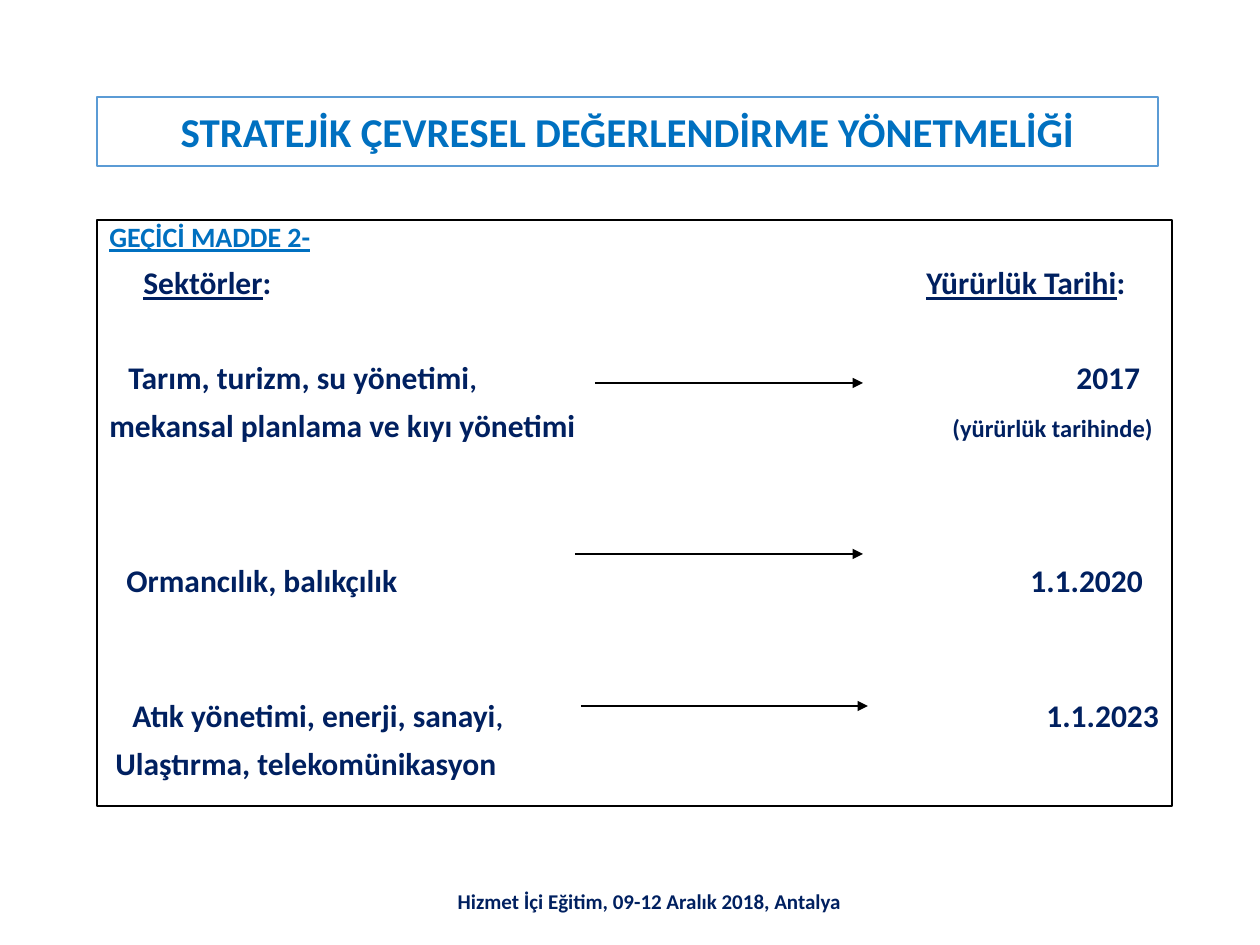
import pptx
import pptx.util
import pptx.dml.color
import pptx.enum.shapes
import pptx.enum.text
import pptx.oxml.ns
import lxml.etree

PX = 914400 / 126
BLUE, NAVY, BLACK = "0070C0", "002060", "000000"
align = pptx.enum.text.PP_ALIGN
anchor = pptx.enum.text.MSO_ANCHOR
qn = pptx.oxml.ns.qn


def paint(form, color):
    form.solid()
    form.fore_color.rgb = pptx.dml.color.RGBColor.from_string(color)


def write(para, text, size, color, under=False):
    run = para.add_run()
    run.text = text
    font = run.font
    font.name, font.size, font.bold = "Calibri", pptx.util.Pt(size), True
    font.underline = under
    paint(font.fill, color)


deck = pptx.Presentation()
deck.slide_width = round(1260 * PX)
deck.slide_height = round(945 * PX)
slide = deck.slides.add_slide(deck.slide_layouts[6])

# Framed boxes: title and body
frames = []
for left, top, width, height, edge, hold in [
    (97, 97, 1061, 69, "5B9BD5", anchor.MIDDLE),
    (97, 220, 1075, 586, BLACK, anchor.TOP),
]:
    box = slide.shapes.add_shape(
        pptx.enum.shapes.MSO_SHAPE.RECTANGLE,
        *[round(n * PX) for n in (left, top, width, height)])
    box.shadow.inherit = False
    box.fill.background()
    paint(box.line.fill, edge)
    box.line.width = pptx.util.Pt(0.75)
    box.text_frame.word_wrap = True
    box.text_frame.vertical_anchor = hold
    frames.append(box.text_frame)
title, body = frames

para = title.paragraphs[0]
para.alignment = align.CENTER
write(para, "STRATEJİK ÇEVRESEL DEĞERLENDİRME YÖNETMELİĞİ", 23.4, BLUE)

# Body rows: space before in points, tab stops in px, runs (text, size, underline)
rows = [
    (10, [34, 817], [("\t", 18, False), ("Sektörler", 18, True), (":\t", 18, False),
                     ("Yürürlük Tarihi", 18, True), (":", 18, False)]),
    (37, [19, 967], [("\tTarım, turizm, su yönetimi", 18, False), (",\t", 16, False),
                     ("2017", 18, False)]),
    (10, [843], [("mekansal planlama ve kıyı yönetimi\t", 18, False),
                 ("(yürürlük tarihinde)", 14, False)]),
    (71, [17, 921], [("\tOrmancılık, balıkçılık\t1.1.2020", 18, False)]),
    (60, [23, 937], [("\tAtık yönetimi, enerji, sanayi", 18, False), (",\t", 16, False),
                     ("1.1.2023", 18, False)]),
    (10, [6], [("\tUlaştırma, telekomünikasyon", 18, False)]),
]
para = body.paragraphs[0]
para.alignment = align.LEFT
para.line_spacing = 0.8
write(para, "GEÇİCİ MADDE 2-", 16, BLUE, True)
for space, stops, runs in rows:
    para = body.add_paragraph()
    para.alignment = align.LEFT
    para.line_spacing = 0.8
    para.space_before = pptx.util.Pt(space)
    tabs = lxml.etree.SubElement(para._p.get_or_add_pPr(), qn("a:tabLst"))
    for stop in stops:
        lxml.etree.SubElement(tabs, qn("a:tab"), pos=str(round(stop * PX)), algn="l")
    for text, size, under in runs:
        write(para, text, size, NAVY, under)

# Arrows from sectors to dates
for start, end, y in [(595, 863, 383), (575, 863, 554), (581, 868, 706)]:
    arrow = slide.shapes.add_connector(
        pptx.enum.shapes.MSO_CONNECTOR.STRAIGHT,
        *[round(n * PX) for n in (start, y, end, y)])
    paint(arrow.line.fill, BLACK)
    arrow.line.width = pptx.util.Pt(0.75)
    lxml.etree.SubElement(arrow.line._get_or_add_ln(), qn("a:tailEnd"), type="triangle")
    lxml.etree.SubElement(arrow._element.spPr, qn("a:effectLst"))

# Footer
foot = slide.shapes.add_textbox(*[round(n * PX) for n in (431, 876, 437, 50)]).text_frame
foot.word_wrap = True
foot.vertical_anchor = anchor.MIDDLE
para = foot.paragraphs[0]
para.alignment = align.CENTER
write(para, "Hizmet İçi Eğitim, 09-12 Aralık 2018, Antalya", 12, NAVY)

deck.save("out.pptx")
